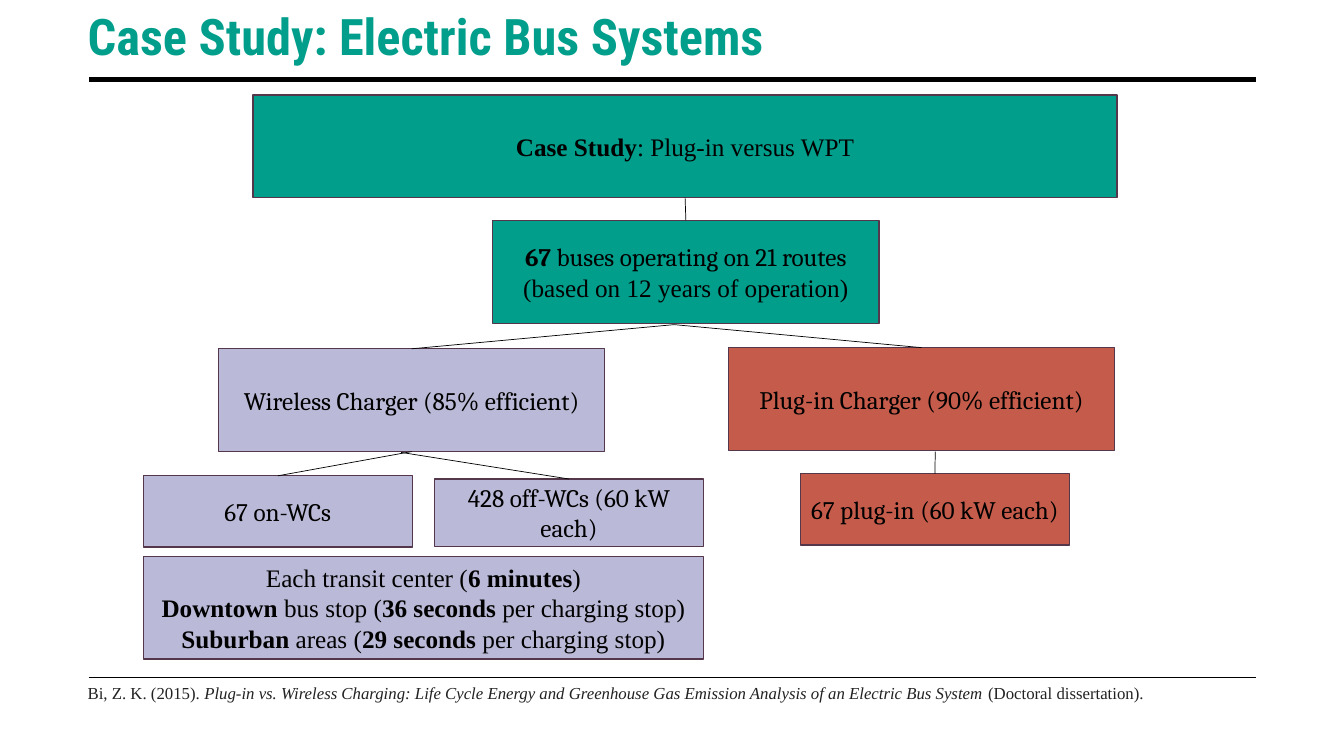
from lxml.etree import SubElement
from pptx import Presentation
from pptx.dml.color import RGBColor
from pptx.enum.shapes import MSO_CONNECTOR, MSO_SHAPE
from pptx.enum.text import MSO_ANCHOR, MSO_AUTO_SIZE, PP_ALIGN
from pptx.oxml.ns import qn
from pptx.util import Cm, Pt

TOP, BOTTOM = 0, 2


def color(hex_code):
    return RGBColor.from_string(hex_code)


class SlideBuilder:
    TEAL, LILAC, RED = "009E8B", "BABAD8", "C55C4B"
    BLACK, BORDER, CITATION = "000000", "55374C", "222222"
    SERIF, BODY, HEADING = "Times New Roman", "Cambria", "Roboto Condensed"

    def __init__(self, slide):
        self.slide = slide

    def fill_paragraph(self, paragraph, marked, font, size, hex_code, emphasis="bold"):
        paragraph.font.name = font
        paragraph.font.size = Pt(size)
        paragraph.font.color.rgb = color(hex_code)
        for position, piece in enumerate(marked.split("*")):
            if piece:
                run = paragraph.add_run()
                run.text = piece
                if position % 2 and emphasis == "bold":
                    run.font.bold = True
                elif position % 2:
                    run.font.italic = True

    def box(self, left, top, width, height, fill, *lines):
        box = self.slide.shapes.add_shape(
            MSO_SHAPE.RECTANGLE, Cm(left), Cm(top), Cm(width), Cm(height))
        box.shadow.inherit = False
        box.fill.solid()
        box.fill.fore_color.rgb = color(fill)
        box.line.color.rgb = color(self.BORDER)
        box.line.width = Pt(1)
        frame = box.text_frame
        frame.word_wrap = True
        frame.vertical_anchor = MSO_ANCHOR.MIDDLE
        for index, (marked, font) in enumerate(lines):
            paragraph = frame.add_paragraph() if index else frame.paragraphs[0]
            paragraph.alignment = PP_ALIGN.CENTER
            self.fill_paragraph(paragraph, marked, font, 18, self.BLACK)
        return box

    def text(self, left, top, width, height, marked, font, size, hex_code, emphasis):
        label = self.slide.shapes.add_textbox(Cm(left), Cm(top), Cm(width), Cm(height))
        frame = label.text_frame
        frame.word_wrap = True
        frame.auto_size = MSO_AUTO_SIZE.SHAPE_TO_FIT_TEXT
        self.fill_paragraph(frame.paragraphs[0], marked, font, size, hex_code, emphasis)

    def line(self, start, end, weight):
        line = self.slide.shapes.add_connector(
            MSO_CONNECTOR.STRAIGHT, *map(Cm, start), *map(Cm, end))
        line.line.color.rgb = color(self.BLACK)
        line.line.width = Pt(weight)
        SubElement(line._element.spPr, qn("a:effectLst"))
        return line

    def branch(self, start, child, parent=None):
        branch = self.line(start, start, 0.5)
        if parent is not None:
            branch.begin_connect(parent, BOTTOM)
        branch.end_connect(child, TOP)


def main():
    presentation = Presentation()
    presentation.slide_width = Cm(33.87)
    presentation.slide_height = Cm(19.05)
    s = SlideBuilder(presentation.slides.add_slide(presentation.slide_layouts[6]))

    for height, weight in ((2.01, 3.5), (17.07, 1)):
        s.line((2.24, height), (31.65, height), weight)
    s.text(1.96, 0, 27.61, 1.8, "*Case Study: Electric Bus Systems*",
           s.HEADING, 36, s.TEAL, "bold")

    study = s.box(6.38, 2.39, 21.77, 2.59, s.TEAL,
                  ("*Case Study*: Plug-in versus WPT", s.SERIF))
    buses = s.box(12.42, 5.56, 9.73, 2.59, s.TEAL,
                  ("*67* buses operating on 21 routes", s.BODY),
                  ("(based on 12 years of operation)", s.SERIF))
    wireless = s.box(5.51, 8.79, 9.73, 2.59, s.LILAC,
                     ("Wireless Charger (85% efficient)", s.BODY))
    on_wcs = s.box(3.61, 11.99, 6.78, 1.8, s.LILAC, ("67 on-WCs", s.BODY))
    off_wcs = s.box(10.95, 12.07, 6.78, 1.7, s.LILAC,
                    ("428 off-WCs (60 kW each)", s.BODY))
    plug_in = s.box(18.36, 8.76, 9.73, 2.59, s.RED,
                    ("Plug-in Charger (90% efficient)", s.BODY))
    plug_in_units = s.box(20.17, 11.94, 6.78, 1.8, s.RED,
                          ("67 plug-in (60 kW each)", s.BODY))

    bus_fork = (16.99, 8.18)
    s.branch((17.27, 4.98), buses, study)
    s.branch(bus_fork, wireless)
    s.branch(bus_fork, plug_in)
    s.branch((10.11, 11.4), off_wcs)
    s.branch((10.37, 11.38), on_wcs, wireless)
    s.branch((23.57, 11.38), plug_in_units)

    s.box(3.61, 14.02, 14.12, 2.59, s.LILAC,
          ("Each transit center (*6 minutes*)", s.SERIF),
          ("*Downtown* bus stop (*36 seconds *per charging stop) "
           "*Suburban* areas (*29 seconds *per charging stop)", s.SERIF))
    s.text(1.96, 17.09, 28.14, 0.76,
           "Bi, Z. K. (2015).\u00a0*Plug-in vs. Wireless Charging: Life Cycle Energy and "
           "Greenhouse Gas Emission Analysis of an Electric Bus System*"
           " (Doctoral dissertation).".replace("\u00a0", " "),
           s.SERIF, 12, s.CITATION, "italic")

    presentation.save("out.pptx")


if __name__ == "__main__":
    main()
